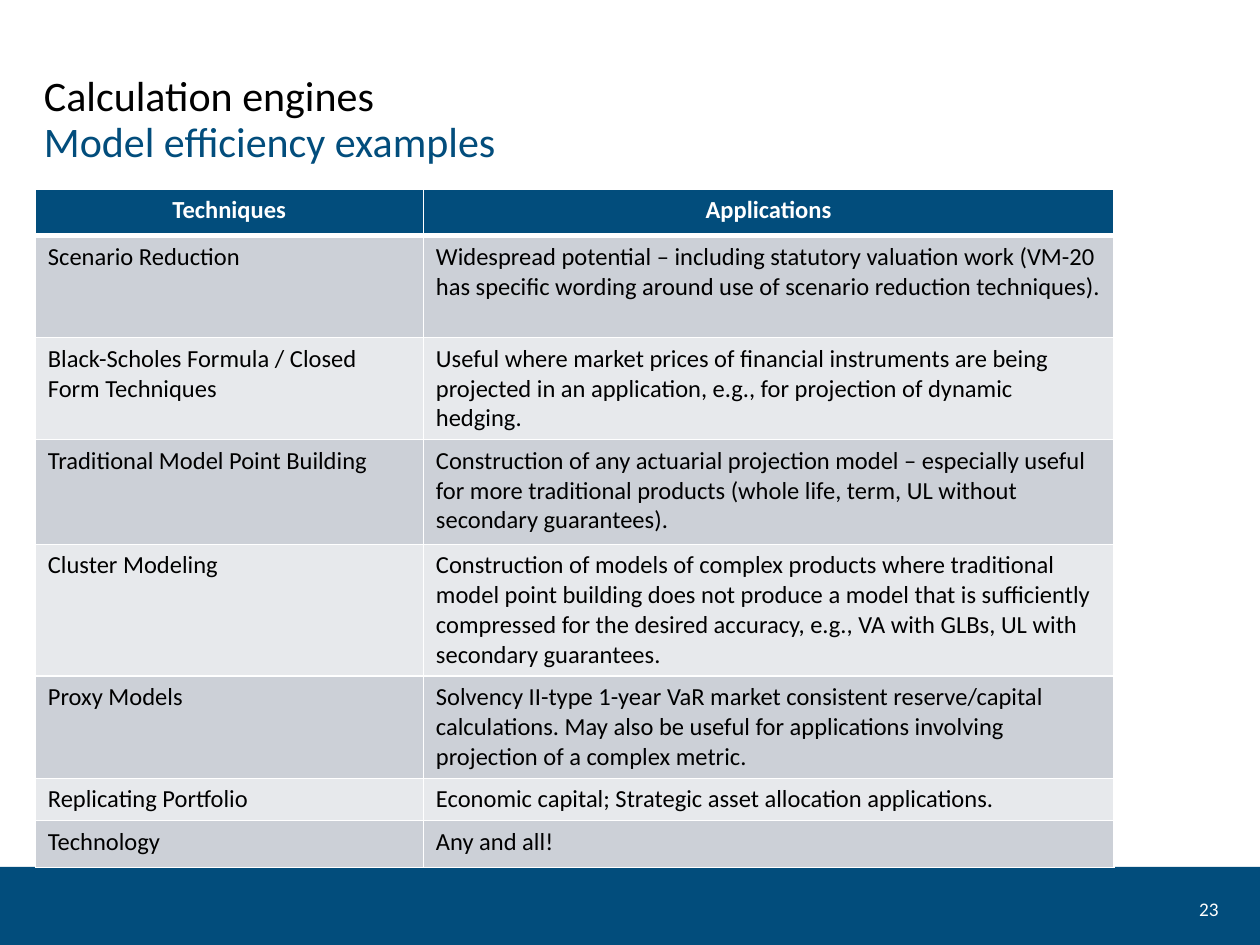
"""Build the slide on model efficiency techniques and their applications."""
from dataclasses import dataclass

import pptx
import pptx.dml.color
import pptx.enum.shapes
import pptx.enum.text
import pptx.oxml
import pptx.oxml.ns
import pptx.util

Inches = pptx.util.Inches
Align = pptx.enum.text.PP_ALIGN


@dataclass(frozen=True)
class Theme:
    """Hold the colours and type sizes."""
    font: str = "Calibri"
    navy: str = "024D7C"
    dark: str = "CCD0D7"
    light: str = "E7E9EC"
    white: str = "FFFFFF"
    black: str = "000000"
    title: int = 24
    body: int = 14
    small: int = 11


THEME = Theme()
WIDTHS = (3.08, 5.48)
HEIGHTS = (0.37, 0.81, 0.81, 0.83, 1.03, 0.8, 0.33, 0.37)
ROWS = (
    ("Techniques", "Applications"),
    ("Scenario Reduction",
     "Widespread potential – including statutory valuation work (VM-20 has "
     "specific wording around use of scenario reduction techniques)."),
    ("Black-Scholes Formula / Closed Form Techniques",
     "Useful where market prices of financial instruments are being projected "
     "in an application, e.g., for projection of dynamic hedging."),
    ("Traditional Model Point Building",
     "Construction of any actuarial projection model – especially useful for "
     "more traditional products (whole life, term, UL without secondary "
     "guarantees)."),
    ("Cluster Modeling",
     "Construction of models of complex products where traditional model "
     "point building does not produce a model that is sufficiently compressed "
     "for the desired accuracy, e.g., VA with GLBs, UL with secondary "
     "guarantees."),
    ("Proxy Models",
     "Solvency II-type 1-year VaR market consistent reserve/capital "
     "calculations. May also be useful for applications involving projection "
     "of a complex metric."),
    ("Replicating Portfolio",
     "Economic capital; Strategic asset allocation applications."),
    ("Technology", "Any and all!"),
)


def paint(fill, color):
    """Give a fill one solid colour."""
    fill.solid()
    fill.fore_color.rgb = pptx.dml.color.RGBColor.from_string(color)


def style(run, size, color, bold=False):
    """Set the font of a run."""
    run.font.name = THEME.font
    run.font.size = pptx.util.Pt(size)
    run.font.bold = bold
    run.font.color.rgb = pptx.dml.color.RGBColor.from_string(color)


def add_band(slide, box, color):
    """Add a plain filled band."""
    kind = pptx.enum.shapes.MSO_SHAPE.RECTANGLE
    band = slide.shapes.add_shape(kind, *map(Inches, box))
    band.shadow.inherit = False
    paint(band.fill, color)
    band.line.fill.background()


def add_label(slide, box, text, size, colors, align=Align.LEFT, space=1.0):
    """Add a text box whose lines each take one colour."""
    frame = slide.shapes.add_textbox(*map(Inches, box)).text_frame
    frame.word_wrap = True
    frame.vertical_anchor = pptx.enum.text.MSO_ANCHOR.MIDDLE
    frame.text = text
    para = frame.paragraphs[0]
    para.alignment = align
    para.line_spacing = space
    for run, color in zip(para.runs, colors):
        style(run, size, color)


def add_edges(cell, base):
    """Draw white borders, with the given width at the base."""
    props = cell._tc.get_or_add_tcPr()
    for side, width in (("L", 1), ("R", 1), ("T", 1), ("B", base)):
        props.append(pptx.oxml.parse_xml(
            f'<a:ln{side} {pptx.oxml.ns.nsdecls("a")} w="{pptx.util.Pt(width)}">'
            f'<a:solidFill><a:srgbClr val="{THEME.white}"/></a:solidFill>'
            f'</a:ln{side}>'))


def fill_cell(cell, text, row):
    """Write and style one cell by its row number."""
    head = row == 0
    add_edges(cell, 3 if head else 1)
    back = THEME.navy if head else (THEME.light, THEME.dark)[row % 2]
    paint(cell.fill, back)
    cell.text_frame.text = text
    para = cell.text_frame.paragraphs[0]
    para.alignment = Align.CENTER if head else Align.LEFT
    ink = THEME.white if head else THEME.black
    style(para.runs[0], THEME.body, ink, head)


def add_grid(slide, left, top):
    """Add the table of techniques."""
    size = map(Inches, (left, top, sum(WIDTHS), sum(HEIGHTS)))
    grid = slide.shapes.add_table(len(ROWS), len(WIDTHS), *size).table
    for col, width in zip(grid.columns, WIDTHS):
        col.width = Inches(width)
    for line, height in zip(grid.rows, HEIGHTS):
        line.height = Inches(height)
    for row, texts in enumerate(ROWS):
        for col, text in enumerate(texts):
            fill_cell(grid.cell(row, col), text, row)


def main():
    """Build and save the slide."""
    deck = pptx.Presentation()
    deck.slide_width, deck.slide_height = Inches(10), Inches(7.5)
    slide = deck.slides.add_slide(deck.slide_layouts[6])
    add_band(slide, (0, 6.88, 10, 0.62), THEME.navy)
    add_grid(slide, 0.28, 1.5)
    add_label(slide, (9.24, 7.1, 0.53, 0.22), "23", THEME.small,
              (THEME.white,), align=Align.RIGHT)
    add_label(slide, (0.25, 0.42, 8.62, 1.08),
              "Calculation engines\vModel efficiency examples", THEME.title,
              (THEME.black, THEME.navy), space=0.9)
    deck.save("out.pptx")


if __name__ == "__main__":
    main()
